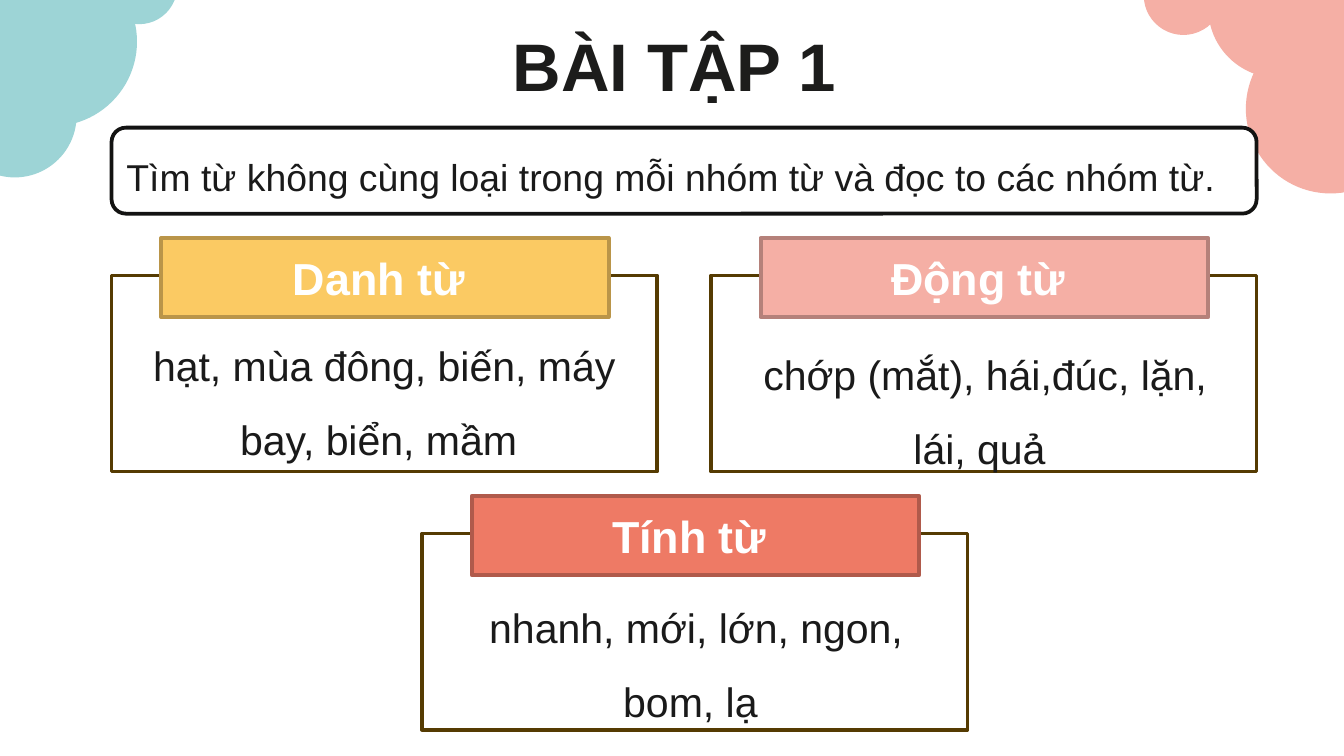
"""Build the word-group exercise slide."""
from typing import NamedTuple

from pptx import Presentation
from pptx.dml.color import RGBColor
from pptx.enum import shapes, text
from pptx.util import Inches, Pt

COLOURS = {
    "teal": "9DD4D6", "pink": "F5AFA5", "yellow": "FBCA63", "coral": "EE7A65",
    "yellow edge": "BA9549", "pink edge": "B5817A", "coral edge": "B05A4B",
    "brown": "553B02", "black": "131312", "title": "1C1C1B",
    "body": "1A1A1A", "white": "FFFFFF",
}


class Box(NamedTuple):
    """A position and size in inches."""
    left: float
    top: float
    width: float
    height: float


class Circle(NamedTuple):
    """A round part of a corner cloud."""
    left: float
    top: float
    diameter: float
    colour: str


class WordGroup(NamedTuple):
    """A frame with a heading bar and its words."""
    left: float
    top: float
    heading: str
    colour: str
    words: str
    words_box: Box


CIRCLES = [
    Circle(-0.24, -0.32, 1.26, "teal"),
    Circle(-0.35, 0.4, 0.92, "teal"),
    Circle(0.75, -0.39, 0.57, "teal"),
    Circle(8.99, -0.46, 1.04, "pink"),
    Circle(9.27, 0.18, 1.26, "pink"),
    Circle(8.51, -0.33, 0.59, "pink"),
]

GROUPS = [
    WordGroup(0.83, 2.05, "Danh từ ", "yellow",
              "hạt, mùa đông, biến, máy bay, biển, mầm ", Box(0.83, 2.3, 4.06, 1.7)),
    WordGroup(5.29, 2.05, "Động từ ", "pink",
              "chớp (mắt), hái,đúc, lặn, lái, quả ", Box(5.49, 2.37, 3.68, 1.14)),
    WordGroup(3.14, 3.97, "Tính từ ", "coral",
              "nhanh, mới, lớn, ngon, bom, lạ ", Box(3.26, 4.25, 3.84, 1.14)),
]


def colour(name: str) -> RGBColor:
    """Look up a colour by name."""
    return RGBColor.from_string(COLOURS[name])


def write(shape, words: str, size: float, ink: str, bold: bool = False,
          spacing: float = 1.0) -> None:
    """Fill a shape with one centred paragraph."""
    shape.text_frame.word_wrap = True
    paragraph = shape.text_frame.paragraphs[0]
    paragraph.text = words
    paragraph.alignment = text.PP_ALIGN.CENTER
    paragraph.line_spacing = spacing
    paragraph.font.name = "Arial"
    paragraph.font.size = Pt(size)
    paragraph.font.bold = bold
    paragraph.font.color.rgb = colour(ink)


def add_shape(slide, kind: shapes.MSO_SHAPE, box: Box, fill: str, line: str = ""):
    """Draw a flat shape with an optional outline."""
    shape = slide.shapes.add_shape(kind, *map(Inches, box))
    shape.shadow.inherit = False
    shape.fill.solid()
    shape.fill.fore_color.rgb = colour(fill)
    if line:
        shape.line.color.rgb = colour(line)
        shape.line.width = Pt(2)
    else:
        shape.line.fill.background()
    return shape


def add_text(slide, box: Box, words: str, size: float, ink: str, bold: bool = False,
             spacing: float = 1.0) -> None:
    """Place a text box."""
    write(slide.shapes.add_textbox(*map(Inches, box)), words, size, ink, bold, spacing)


def add_frame(slide, group: WordGroup) -> None:
    """Draw the frame and heading bar of a word group."""
    rectangle = shapes.MSO_SHAPE.RECTANGLE
    add_shape(slide, rectangle, Box(group.left, group.top, 4.06, 1.46), "white", "brown")
    heading_box = Box(group.left + 0.37, group.top - 0.28, 3.33, 0.59)
    heading = add_shape(slide, rectangle, heading_box, group.colour, f"{group.colour} edge")
    heading.text_frame.vertical_anchor = text.MSO_ANCHOR.MIDDLE
    write(heading, group.heading, 24, "white", bold=True)


def main() -> None:
    """Assemble and save the slide."""
    presentation = Presentation()
    presentation.slide_width = Inches(10)
    presentation.slide_height = Inches(10 * 9 / 16)
    slide = presentation.slides.add_slide(presentation.slide_layouts[6])

    for circle in CIRCLES:
        box = Box(circle.left, circle.top, circle.diameter, circle.diameter)
        add_shape(slide, shapes.MSO_SHAPE.OVAL, box, circle.colour)

    add_text(slide, Box(2.81, 0.13, 4.56, 0.71), "BÀI TẬP 1 ", 36, "title", bold=True)
    add_shape(slide, shapes.MSO_SHAPE.ROUNDED_RECTANGLE, Box(0.83, 0.95, 8.52, 0.64),
              "white", "black")
    add_text(slide, Box(0.83, 0.93, 8.33, 0.54),
             "Tìm từ không cùng loại trong mỗi nhóm từ và đọc to các nhóm từ. ",
             20, "body", spacing=1.5)

    for group in GROUPS:
        add_frame(slide, group)
    for group in GROUPS:
        add_text(slide, group.words_box, group.words, 22, "body", spacing=1.5)

    presentation.save("out.pptx")


if __name__ == "__main__":
    main()
